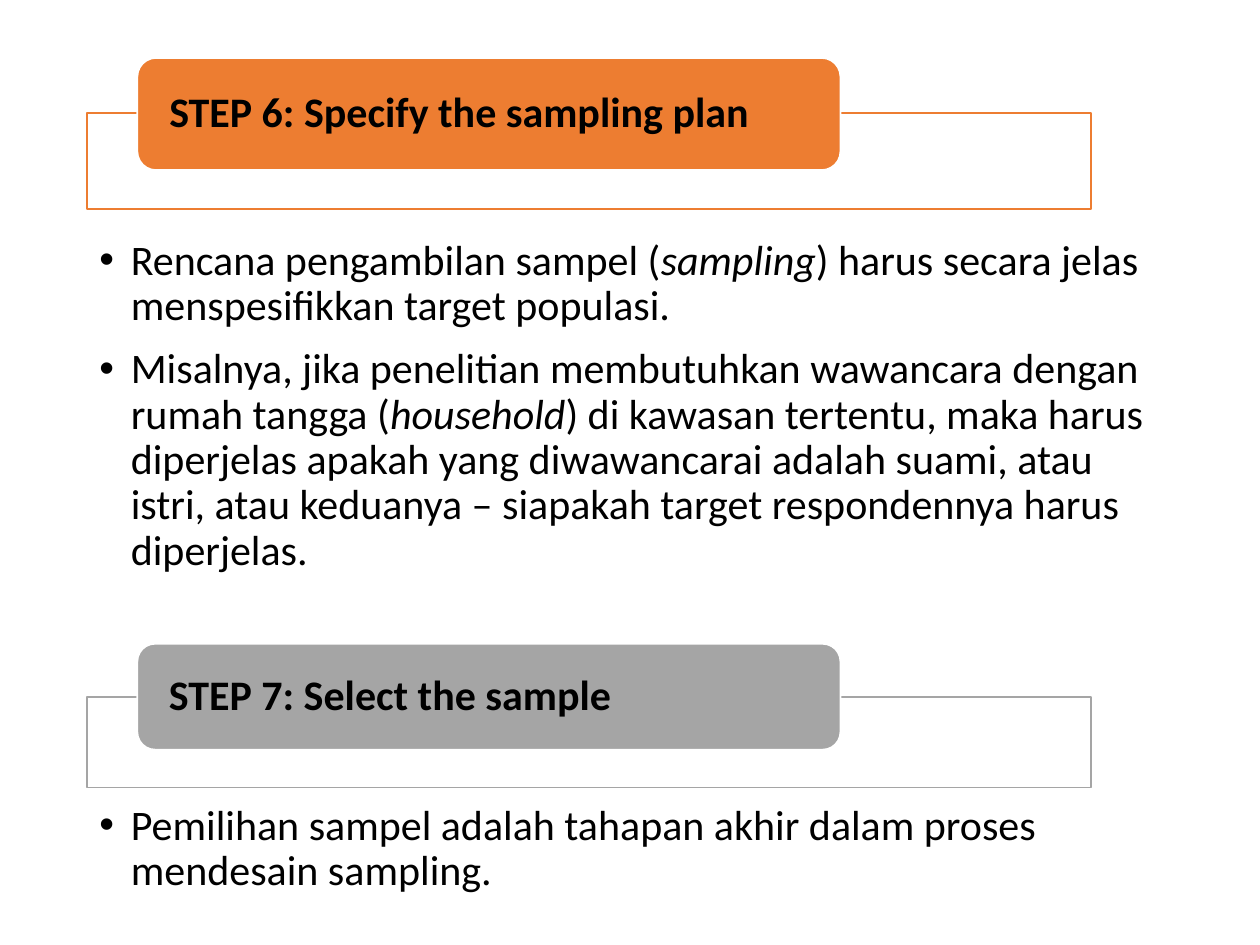
from dataclasses import dataclass

from lxml.etree import SubElement
from pptx import Presentation
from pptx.dml.color import RGBColor as Color
from pptx.enum.shapes import MSO_SHAPE as Shape
from pptx.enum.text import MSO_ANCHOR as Anchor, PP_ALIGN as Align
from pptx.oxml.ns import qn
from pptx.util import Inches, Pt


@dataclass(frozen=True)
class Theme:
    font: str = "Calibri"
    size: int = 24
    line_spacing: float = 0.9
    space_before: int = 10
    line_width: int = 1
    text: Color = Color(0, 0, 0)
    white: Color = Color(255, 255, 255)
    sampling_plan: Color = Color(0xED, 0x7D, 0x31)
    sample_selection: Color = Color(0xA5, 0xA5, 0xA5)


THEME = Theme()
WIDTH, HEIGHT = Inches(10), Inches(7.5)
COLUMN, ROW = WIDTH / 100, HEIGHT / 75
LEFT = 6.9
BODY_WIDTH = 100 - 2 * LEFT


def place(left, top, width, height):
    return [round(left * COLUMN), round(top * ROW),
            round(width * COLUMN), round(height * ROW)]


def style_run(run, bold=False, italic=False):
    font = run.font
    font.name = THEME.font
    font.size = Pt(THEME.size)
    font.color.rgb = THEME.text
    font.bold = bold
    font.italic = italic


def add_box(shapes, kind, area, fill, line):
    shape = shapes.add_shape(kind, *place(*area))
    shape.shadow.inherit = False
    shape.fill.solid()
    shape.fill.fore_color.rgb = fill
    shape.line.color.rgb = line
    shape.line.width = Pt(THEME.line_width)
    return shape


def set_opacity(shape, percent):
    color = shape.fill._xPr.find(qn("a:solidFill"))[0]
    SubElement(color, qn("a:alpha")).set("val", str(percent * 1000))


def add_step(slide, title, color, frame_top, frame_height, label_top, label_height):
    shapes = slide.shapes.add_group_shape().shapes
    frame = add_box(shapes, Shape.RECTANGLE,
                    (LEFT, frame_top, 79.7, frame_height), THEME.white, color)
    set_opacity(frame, 90)
    label = add_box(shapes, Shape.ROUNDED_RECTANGLE,
                    (10.9, label_top, 55.8, label_height), color, THEME.white)
    text_frame = label.text_frame
    text_frame.text = title
    text_frame.word_wrap = True
    text_frame.vertical_anchor = Anchor.MIDDLE
    text_frame.margin_left = text_frame.margin_right = Inches(0.21)
    text_frame.margin_top = text_frame.margin_bottom = 0
    paragraph = text_frame.paragraphs[0]
    paragraph.alignment = Align.LEFT
    paragraph.line_spacing = THEME.line_spacing
    style_run(paragraph.runs[0], bold=True)


def add_bullet(paragraph):
    properties = paragraph._p.get_or_add_pPr()
    properties.set("marL", str(Inches(0.25)))
    properties.set("indent", str(-Inches(0.25)))
    SubElement(properties, qn("a:buFont")).set("typeface", "Arial")
    SubElement(properties, qn("a:buChar")).set("char", "•")


def add_bullet_list(slide, top, height, items):
    text_box = slide.shapes.add_textbox(*place(LEFT, top, BODY_WIDTH, height))
    text_frame = text_box.text_frame
    text_frame.word_wrap = True
    for index, pieces in enumerate(items):
        paragraph = text_frame.add_paragraph() if index else text_frame.paragraphs[0]
        add_bullet(paragraph)
        paragraph.line_spacing = THEME.line_spacing
        paragraph.space_before = Pt(THEME.space_before if index else 0)
        for position, piece in enumerate(pieces):
            run = paragraph.add_run()
            run.text = piece
            style_run(run, italic=position % 2 == 1)


def main():
    presentation = Presentation()
    presentation.slide_width, presentation.slide_height = WIDTH, HEIGHT
    slide = presentation.slides.add_slide(presentation.slide_layouts[6])

    add_bullet_list(slide, 18.5, 29.6, [
        ("Rencana pengambilan sampel (", "sampling",
         ") harus secara jelas menspesifikkan target populasi."),
        ("Misalnya, jika penelitian membutuhkan wawancara dengan rumah tangga (",
         "household",
         ") di kawasan tertentu, maka harus diperjelas apakah yang diwawancarai "
         "adalah suami, atau istri, atau keduanya – siapakah target respondennya "
         "harus diperjelas."),
    ])
    add_step(slide, "STEP 6: Specify the sampling plan", THEME.sampling_plan,
             9, 7.6, 4.6, 8.9)
    add_step(slide, "STEP 7: Select the sample", THEME.sample_selection,
             55.3, 7.2, 51.1, 8.4)
    add_bullet_list(slide, 63.3, 9.6, [
        ("Pemilihan sampel adalah tahapan akhir dalam proses mendesain sampling.",),
    ])

    presentation.save("out.pptx")


if __name__ == "__main__":
    main()
